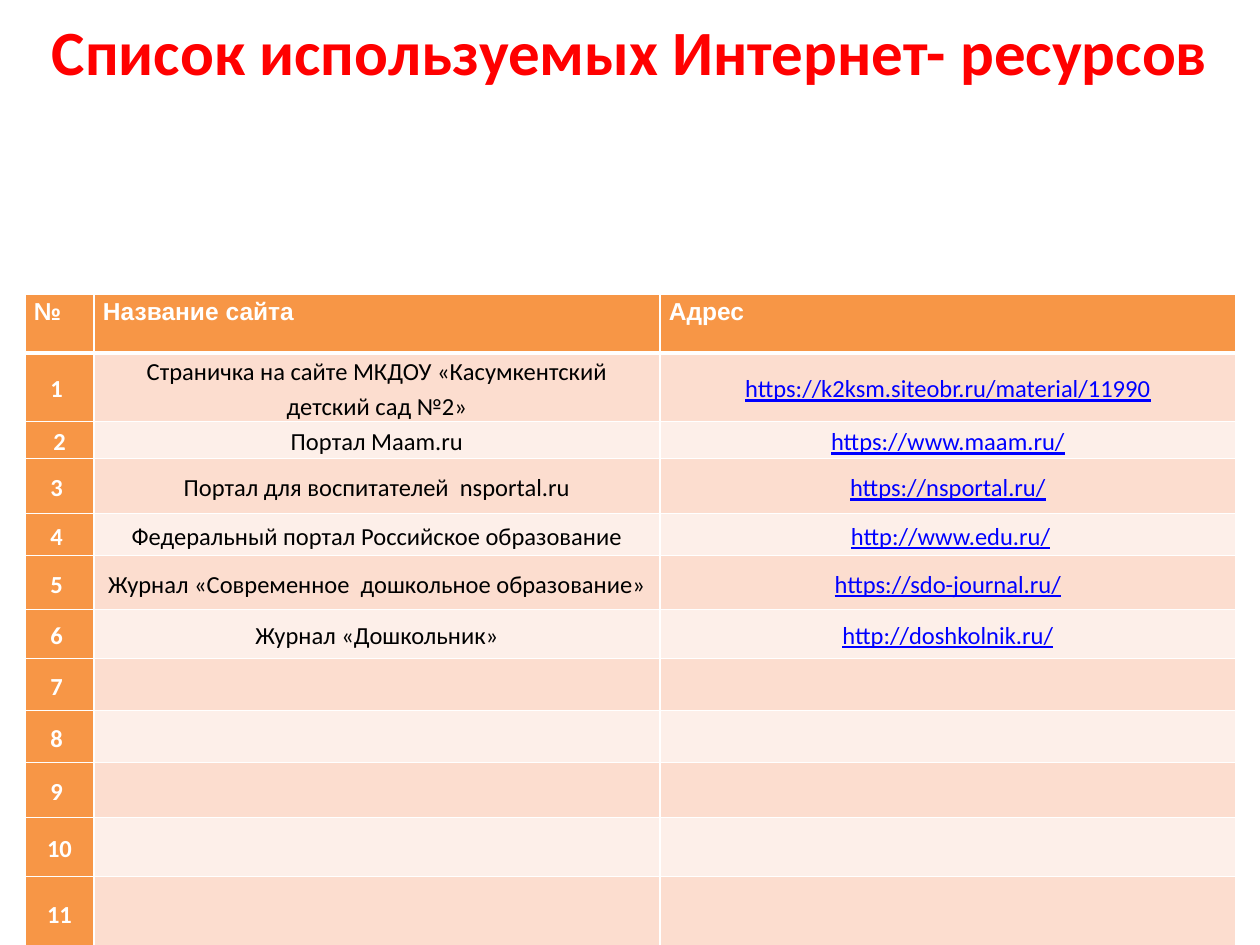
from dataclasses import dataclass

import pptx
import pptx.dml.color
import pptx.enum.text
import pptx.oxml
import pptx.oxml.ns
import pptx.util

EMU_PER_PX = 914400 / 126
ALIGN = pptx.enum.text.PP_ALIGN
ANCHOR = pptx.enum.text.MSO_ANCHOR


@dataclass(frozen=True)
class Theme:
    title: str = "FF0000"
    accent: str = "F79646"
    bands: tuple[str, str] = ("FCDDCF", "FDEFE9")
    light: str = "FFFFFF"
    dark: str = "000000"
    link: str = "0000FF"
    heading_font: str = "Arial"
    body_font: str = "Calibri"
    title_size: int = 36
    table_size: int = 14
    line_spacing: float = 1.15
    thin_line: int = 1
    thick_line: int = 3


@dataclass(frozen=True)
class TextStyle:
    font: str
    size: int
    color: str
    bold: bool = False
    underline: bool = False


@dataclass(frozen=True)
class Resource:
    number: str
    height: int
    site: str = ""
    address: str = ""
    lead: str = ""


THEME = Theme()
TITLE = TextStyle(THEME.body_font, THEME.title_size, THEME.title, bold=True)
HEADING = TextStyle(THEME.heading_font, THEME.table_size, THEME.light, bold=True)
NUMBER = TextStyle(THEME.body_font, THEME.table_size, THEME.light, bold=True)
BODY = TextStyle(THEME.body_font, THEME.table_size, THEME.dark)
ADDRESS = TextStyle(THEME.body_font, THEME.table_size, THEME.link, underline=True)

HEADINGS = ("№", "Название сайта", "Адрес")
COLUMN_WIDTHS = (69, 566, 576)
HEADING_HEIGHT = 59
RESOURCES = (
    Resource("1 ", 67, "Страничка на сайте МКДОУ «Касумкентский детский сад №2»",
             "https://k2ksm.siteobr.ru/material/11990"),
    Resource("2", 37, "Портал Maam.ru", "https://www.maam.ru/"),
    Resource("3 ", 55, "Портал для воспитателей  nsportal.ru", "https://nsportal.ru/"),
    Resource("4 ", 42, "Федеральный портал Российское образование",
             "http://www.edu.ru/", lead=" "),
    Resource("5 ", 54, "Журнал «Современное  дошкольное образование»",
             "https://sdo-journal.ru/"),
    Resource("6 ", 49, "Журнал «Дошкольник»", "http://doshkolnik.ru/"),
    Resource("7 ", 52),
    Resource("8 ", 52),
    Resource("9 ", 55),
    Resource("10", 59),
    Resource("11", 73),
)


def px(length: int) -> pptx.util.Emu:
    return pptx.util.Emu(round(length * EMU_PER_PX))


def rgb(color: str) -> pptx.dml.color.RGBColor:
    return pptx.dml.color.RGBColor.from_string(color)


def add_run(paragraph, text: str, style: TextStyle) -> None:
    run = paragraph.add_run()
    run.text = text
    run.font.name = style.font
    run.font.size = pptx.util.Pt(style.size)
    run.font.bold = style.bold
    run.font.underline = style.underline
    run.font.color.rgb = rgb(style.color)


def add_border(cell, side: str, width: int) -> None:
    line = pptx.oxml.parse_xml(
        f'<a:{side} {pptx.oxml.ns.nsdecls("a")} w="{pptx.util.Pt(width)}">'
        f'<a:solidFill><a:srgbClr val="{THEME.light}"/></a:solidFill></a:{side}>'
    )
    cell._tc.get_or_add_tcPr().append(line)


def format_cell(cell, fill: str, top: int, bottom: int) -> None:
    cell.margin_left = cell.margin_right = px(9)
    cell.margin_top = cell.margin_bottom = 0
    widths = {"lnL": THEME.thin_line, "lnR": THEME.thin_line, "lnT": top, "lnB": bottom}
    for side, width in widths.items():
        add_border(cell, side, width)
    cell.fill.solid()
    cell.fill.fore_color.rgb = rgb(fill)


def write_cell(cell, runs: list[tuple[str, TextStyle]], centered: bool) -> None:
    paragraph = cell.text_frame.paragraphs[0]
    paragraph.line_spacing = THEME.line_spacing
    if centered:
        paragraph.alignment = ALIGN.CENTER
        cell.vertical_anchor = ANCHOR.MIDDLE
    for text, style in runs:
        if text:
            add_run(paragraph, text, style)


def add_resource_table(slide) -> None:
    heights = [HEADING_HEIGHT] + [resource.height for resource in RESOURCES]
    table = slide.shapes.add_table(
        len(heights), len(COLUMN_WIDTHS),
        px(25), px(294), px(sum(COLUMN_WIDTHS)), px(sum(heights)),
    ).table
    table.horz_banding = False
    for column, width in zip(table.columns, COLUMN_WIDTHS):
        column.width = px(width)
    for row, height in zip(table.rows, heights):
        row.height = px(height)

    # Heading row
    for column, heading in enumerate(HEADINGS):
        cell = table.cell(0, column)
        format_cell(cell, THEME.accent, THEME.thin_line, THEME.thick_line)
        write_cell(cell, [(heading, HEADING)], centered=False)

    # Numbered rows with alternating bands
    for index, resource in enumerate(RESOURCES):
        band = THEME.bands[index % 2]
        top = THEME.thin_line if index else THEME.thick_line
        contents = (
            (THEME.accent, [(resource.number, NUMBER)]),
            (band, [(resource.site, BODY)]),
            (band, [(resource.lead, BODY), (resource.address, ADDRESS)]),
        )
        for column, (fill, runs) in enumerate(contents):
            cell = table.cell(index + 1, column)
            format_cell(cell, fill, top, THEME.thin_line)
            write_cell(cell, runs, centered=True)


def add_title(slide) -> None:
    frame = slide.shapes.add_textbox(0, px(6), px(1260), px(89)).text_frame
    frame.word_wrap = True
    frame.auto_size = pptx.enum.text.MSO_AUTO_SIZE.SHAPE_TO_FIT_TEXT
    paragraph = frame.paragraphs[0]
    paragraph.alignment = ALIGN.CENTER
    add_run(paragraph, "Список используемых Интернет- ресурсов", TITLE)


def main() -> None:
    presentation = pptx.Presentation()
    presentation.slide_width = px(1260)
    presentation.slide_height = px(945)
    slide = presentation.slides.add_slide(presentation.slide_layouts[6])
    add_resource_table(slide)
    add_title(slide)
    presentation.save("out.pptx")


if __name__ == "__main__":
    main()
